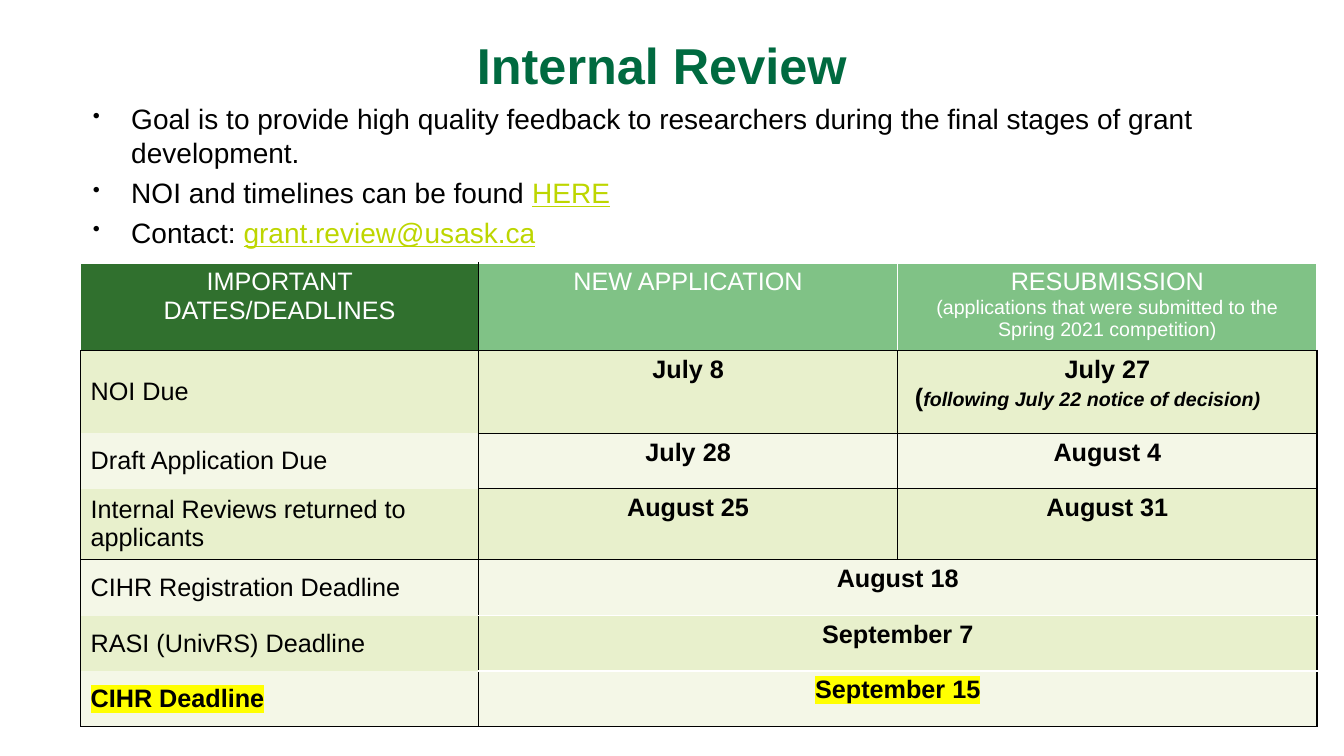
from lxml.etree import SubElement
from pptx import Presentation
from pptx.dml.color import RGBColor
from pptx.enum.text import MSO_ANCHOR, PP_ALIGN
from pptx.oxml.ns import qn
from pptx.util import Inches, Pt

BLACK = RGBColor(0x00, 0x00, 0x00)
WHITE = RGBColor(0xFF, 0xFF, 0xFF)
TITLE_GREEN = RGBColor(0x00, 0x6A, 0x40)
LINK_LIME = RGBColor(0xBD, 0xD6, 0x00)
HEAD_DARK = RGBColor(0x30, 0x70, 0x2E)
HEAD_LIGHT = RGBColor(0x80, 0xC2, 0x86)
BAND_DARK = RGBColor(0xE8, 0xF0, 0xCC)
BAND_LIGHT = RGBColor(0xF4, 0xF7, 0xE7)
YELLOW = RGBColor(0xFF, 0xFF, 0x00)
BORDER_COLORS = {"K": BLACK, "W": WHITE}


class Deck:
    font = "Arial"
    columns, rows = 40, 22.5

    def __init__(self):
        self.prs = Presentation()
        self.prs.slide_width = Inches(13.33)
        self.prs.slide_height = Inches(7.5)
        self.s = self.prs.slides.add_slide(self.prs.slide_layouts[6])

    def x(self, n):
        return int(self.prs.slide_width * n / self.columns)

    def y(self, n):
        return int(self.prs.slide_height * n / self.rows)

    def run(self, p, text, size, color=BLACK, bold=False, italic=False,
            underline=False, highlight=None):
        r = p.add_run()
        r.text = text
        f = r.font
        f.name, f.size, f.bold, f.italic = self.font, Pt(size), bold, italic
        f.underline = underline
        f.color.rgb = color
        if highlight is not None:
            rPr = r._r.get_or_add_rPr()
            mark = SubElement(rPr, qn("a:highlight"))
            SubElement(mark, qn("a:srgbClr"), val=str(highlight))
            rPr.find(qn("a:solidFill")).addnext(mark)

    def text_box(self, left, top, width, height, anchor):
        sp = self.s.shapes.add_textbox(self.x(left), self.y(top),
                                       self.x(width), self.y(height))
        tf = sp.text_frame
        tf.word_wrap = True
        tf.vertical_anchor = anchor
        return tf

    def title(self, text, *box):
        p = self.text_box(*box, MSO_ANCHOR.MIDDLE).paragraphs[0]
        p.alignment = PP_ALIGN.CENTER
        self.run(p, text, 36, TITLE_GREEN, bold=True)

    def bullets(self, items, *box):
        tf = self.text_box(*box, MSO_ANCHOR.TOP)
        for i, (text, link) in enumerate(items):
            p = tf.add_paragraph() if i else tf.paragraphs[0]
            pPr = p._p.get_or_add_pPr()
            pPr.set("marL", str(Inches(0.87)))
            pPr.set("indent", str(Inches(-0.38)))
            SubElement(pPr, qn("a:buSzPct"), val="75000")
            SubElement(pPr, qn("a:buChar"), char="•")
            p.space_before = Pt(4.5 if i else 0)
            self.run(p, text, 20)
            if link:
                self.run(p, link, 20, LINK_LIME, underline=True)

    def table(self, left, top, widths, heights):
        frame = self.s.shapes.add_table(
            len(heights), len(widths), self.x(left), self.y(top),
            self.x(sum(widths)), self.y(sum(heights)))
        tbl = frame.table
        tbl.first_row = tbl.horz_banding = False
        for column, width in zip(tbl.columns, widths):
            column.width = self.x(width)
        for row, height in zip(tbl.rows, heights):
            row.height = self.y(height)
        return tbl

    def cell(self, cell, fill, borders):
        """Borders are four letters: left, right, top, bottom."""
        cell.fill.solid()
        cell.fill.fore_color.rgb = fill
        tcPr = cell._tc.get_or_add_tcPr()
        for i, (side, code) in enumerate(zip("LRTB", borders)):
            ln = SubElement(tcPr, qn("a:ln" + side), w=str(Pt(1)))
            if code in BORDER_COLORS:
                solid = SubElement(ln, qn("a:solidFill"))
                SubElement(solid, qn("a:srgbClr"), val=str(BORDER_COLORS[code]))
            else:
                SubElement(ln, qn("a:noFill"))
            tcPr.insert(i, ln)

    def line(self, cell, text, size=18, first=True, align=PP_ALIGN.CENTER, **style):
        tf = cell.text_frame
        p = tf.paragraphs[0] if first else tf.add_paragraph()
        p.alignment = align
        self.run(p, text, size, **style)
        return p


HEADERS = [
    ("IMPORTANT DATES/DEADLINES", HEAD_DARK, "WKWK"),
    ("NEW APPLICATION", HEAD_LIGHT, "KWWK"),
    ("RESUBMISSION", HEAD_LIGHT, "WWWK"),
]
# Label, label borders, dates, date borders; a single date spans two columns
DEADLINES = [
    ("NOI Due", "KKK-", ["July 8", "July 27"], "KKKK"),
    ("Draft Application Due", "KK--", ["July 28", "August 4"], "KKKK"),
    ("Internal Reviews returned to applicants", "KK-K",
     ["August 25", "August 31"], "KKKK"),
    ("CIHR Registration Deadline", "KKK-", ["August 18"], "KKKW"),
    ("RASI (UnivRS) Deadline", "KK--", ["September 7"], "KKWW"),
    ("CIHR Deadline", "KK-K", ["September 15"], "KKWK"),
]


def main():
    deck = Deck()

    # Heading and introduction
    deck.title("Internal Review", 1, 0.9, 37.4, 2)
    deck.bullets([
        ("Goal is to provide high quality feedback to researchers during "
         "the final stages of grant development.", None),
        ("NOI and timelines can be found ", "HERE"),
        ("Contact: ", "grant.review@usask.ca"),
    ], 1, 2.88, 37.4, 14.76)

    # Table header
    tbl = deck.table(2.4, 7.83, [11.84, 12.48, 12.48],
                     [1.65, 2.46, 1.65, 1.65, 1.68, 1.65, 1.65])
    for c, (text, fill, borders) in enumerate(HEADERS):
        deck.cell(tbl.cell(0, c), fill, borders)
        deck.line(tbl.cell(0, c), text, color=WHITE)
    deck.line(tbl.cell(0, 2), "(applications that were submitted to the "
              "Spring 2021 competition)", 14, first=False, color=WHITE)

    # Deadlines
    for row, (label, label_borders, dates, borders) in enumerate(DEADLINES, 1):
        fill = BAND_DARK if row % 2 else BAND_LIGHT
        final = row == len(DEADLINES)
        mark = YELLOW if final else None
        name = tbl.cell(row, 0)
        deck.cell(name, fill, label_borders)
        name.vertical_anchor = MSO_ANCHOR.MIDDLE
        deck.line(name, label, align=PP_ALIGN.LEFT, bold=final, highlight=mark)
        merged = len(dates) == 1
        if merged:
            tbl.cell(row, 1).merge(tbl.cell(row, 2))
        for c in (1, 2):
            inner = merged and c == 2
            deck.cell(tbl.cell(row, c), fill, "-" + borders[1:] if inner else borders)
        for c, date in enumerate(dates, 1):
            deck.line(tbl.cell(row, c), date, bold=True, highlight=mark)

    # Remark under the resubmission NOI date
    p = deck.line(tbl.cell(1, 2), "(", first=False, align=PP_ALIGN.LEFT, bold=True)
    p._p.get_or_add_pPr().set("marL", str(Inches(0.07)))
    deck.run(p, "following July 22 notice of decision)", 14, bold=True, italic=True)

    deck.prs.save("out.pptx")


if __name__ == "__main__":
    main()
